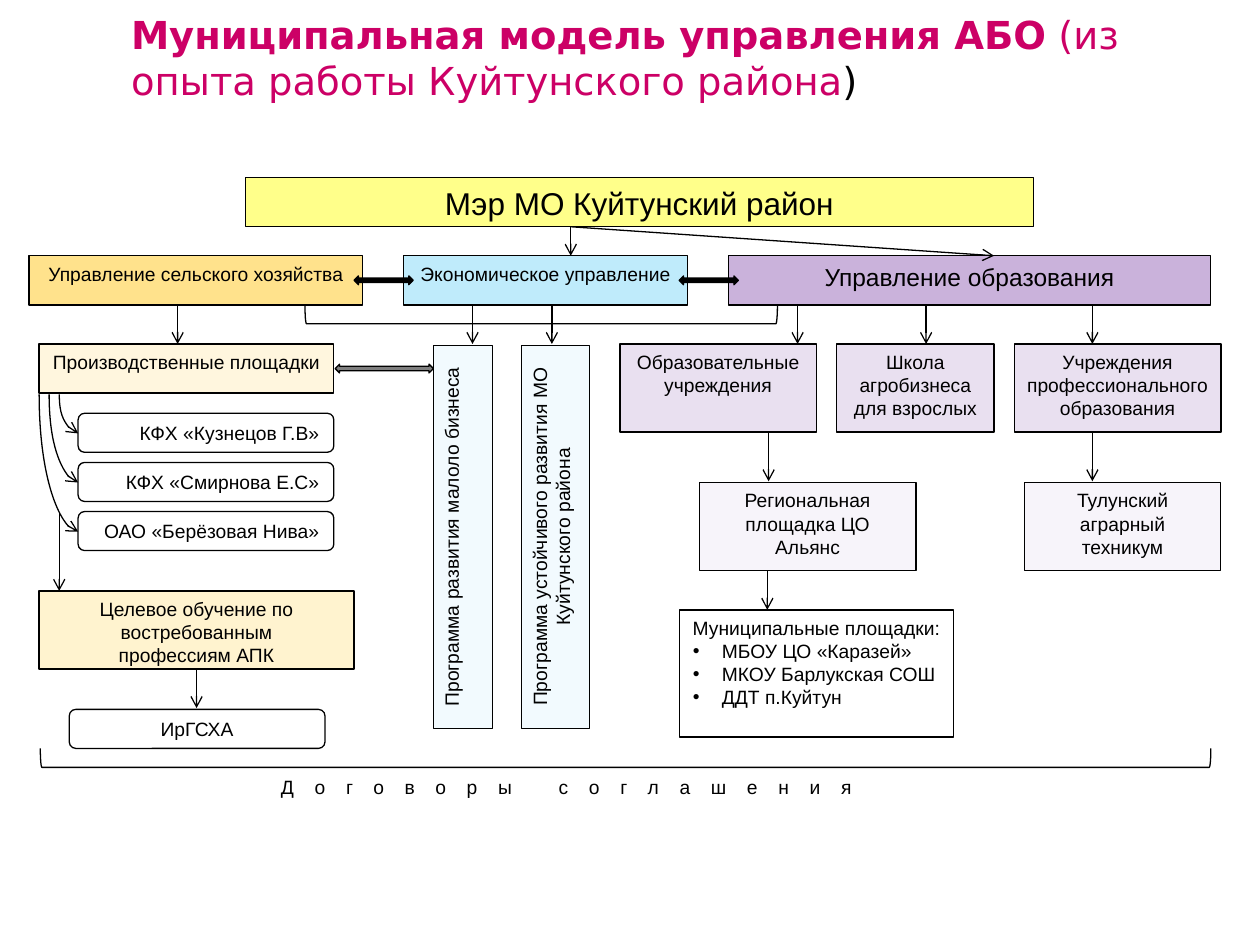
from dataclasses import dataclass

from lxml import etree
from pptx import Presentation
from pptx import util as u
from pptx.dml import color
from pptx.enum import shapes, text
from pptx.oxml import ns

INK, WHITE, PINK = "000000", "FFFFFF", "CC0066"
GOLD, BLUE, PURPLE = "FFC000", "00B0F0", "7030A0"
RECT = shapes.MSO_SHAPE.RECTANGLE
ROUNDED = shapes.MSO_SHAPE.FLOWCHART_ALTERNATE_PROCESS
CENTER, RIGHT, LEFT = text.PP_ALIGN.CENTER, text.PP_ALIGN.RIGHT, text.PP_ALIGN.LEFT


@dataclass
class Region:
    """A part of the page whose contents are placed from its top left corner."""
    page: object
    left: float
    top: float

    def spot(self, x, y):
        """Return page coordinates of a point in the region."""
        return u.Inches(self.left + x), u.Inches(self.top + y)


def rgb(value):
    """Turn a hex string into a colour."""
    return color.RGBColor.from_string(value)


def add_xml(parent, tag, **attributes):
    """Append a drawing element with attributes."""
    return etree.SubElement(parent, ns.qn(tag), **attributes)


def paint(shape, fill, alpha=100, line=INK):
    """Set fill, opacity and outline."""
    shape.shadow.inherit = False
    if fill:
        shape.fill.solid()
        shape.fill.fore_color.rgb = rgb(fill)
        if alpha < 100:
            tint = shape._element.spPr.find(".//" + ns.qn("a:srgbClr"))
            add_xml(tint, "a:alpha", val=str(alpha * 1000))
    else:
        shape.fill.background()
    if line:
        shape.line.color.rgb = rgb(line)
        shape.line.width = u.Pt(0.75)
    else:
        shape.line.fill.background()


def add_span(para, words, size, name="Arial", ink=INK, bold=False):
    """Add one formatted run."""
    span = para.add_run()
    span.text = words
    span.font.size, span.font.name, span.font.bold = u.Pt(size), name, bold
    span.font.color.rgb = rgb(ink)
    return span


def add_shape(region, kind, x, y, width, height, fill=None, alpha=100, line=INK, turn=0):
    """Add a shape that covers the given area after being turned."""
    if turn:
        x, y = x + (width - height) / 2, y + (height - width) / 2
        width, height = height, width
    shape = region.page.shapes.add_shape(
        kind, *region.spot(x, y), u.Inches(width), u.Inches(height))
    shape.rotation = turn
    paint(shape, fill, alpha, line)
    return shape


def add_box(region, x, y, width, height, lines, fill=WHITE, alpha=100, size=11,
            kind=RECT, align=CENTER, turn=0, line=INK):
    """Add a labelled box with one paragraph for each line."""
    box = add_shape(region, kind, x, y, width, height, fill, alpha, line, turn)
    frame = box.text_frame
    frame.word_wrap = True
    frame.vertical_anchor = text.MSO_ANCHOR.TOP
    for index, words in enumerate(lines):
        para = frame.add_paragraph() if index else frame.paragraphs[0]
        para.alignment = align
        add_span(para, words, size)
    return box


def add_arrow(region, x, y, end_x, end_y, curved=False):
    """Add an arrow; a curved one leaves downwards and arrives sideways."""
    kind = shapes.MSO_CONNECTOR.STRAIGHT
    start, end = (x, y), (end_x, end_y)
    if curved:
        kind = shapes.MSO_CONNECTOR.CURVE
        middle_x, middle_y = (x + end_x) / 2, (y + end_y) / 2
        half_x, half_y = (end_x - x) / 2, (end_y - y) / 2
        start = middle_x + half_y, middle_y - half_x
        end = middle_x - half_y, middle_y + half_x
    arrow = region.page.shapes.add_connector(kind, *region.spot(*start), *region.spot(*end))
    arrow.line.color.rgb = rgb(INK)
    arrow.line.width = u.Pt(0.75)
    properties = arrow._element.spPr
    if curved:
        properties.find(ns.qn("a:xfrm")).set("rot", "16200000")
        properties.find(ns.qn("a:prstGeom")).set("prst", "curvedConnector2")
    add_xml(properties.find(ns.qn("a:ln")), "a:tailEnd", type="arrow")
    add_xml(properties, "a:effectLst")


def add_double_arrow(region, x, y, width, alpha=100):
    """Add a thin block arrow with two heads."""
    add_shape(region, shapes.MSO_SHAPE.LEFT_RIGHT_ARROW, x, y, width, 0.07, INK, alpha)


def add_bracket(region, x, y, width):
    """Add a bracket that opens upwards."""
    bracket = add_shape(region, shapes.MSO_SHAPE.RIGHT_BRACKET, x, y, width, 0.15, turn=90)
    bracket.adjustments[0] = 0.083


def add_title(page):
    """Place and format the title."""
    title = page.shapes.title
    title.left, title.top = u.Inches(0.94), u.Inches(0.08)
    title.width, title.height = u.Inches(8.58), u.Inches(0.75)
    frame = title.text_frame
    frame.word_wrap, frame.auto_size = True, text.MSO_AUTO_SIZE.NONE
    frame.vertical_anchor = text.MSO_ANCHOR.MIDDLE
    para = frame.paragraphs[0]
    para.alignment = LEFT
    for words, ink, bold in (("Муниципальная модель управления АБО", PINK, True),
                             (" (из опыта работы Куйтунского района", PINK, False),
                             (")", INK, False)):
        add_span(para, words, 22, "DejaVu Sans", ink, bold)


def add_management(region):
    """Draw the mayor, the three departments and their links."""
    add_box(region, 1.72, 0, 6.25, 0.39, ["Мэр МО Куйтунский район"], "FFFF00", 46, 18)
    add_box(region, 0, 0.62, 2.65, 0.39, ["Управление сельского хозяйства"], GOLD, 45)
    add_box(region, 2.97, 0.62, 2.26, 0.39, ["Экономическое управление"], BLUE, 25)
    add_box(region, 5.55, 0.62, 3.83, 0.39, ["Управление образования"], PURPLE, 37, 14)
    for x in (2.58, 5.16):
        add_double_arrow(region, x, 0.78, 0.47)
    for end_x in (4.3, 7.66):
        add_arrow(region, 4.3, 0.39, end_x, 0.62)
    add_bracket(region, 2.19, 1.01, 3.75)


def add_agriculture(region):
    """Draw production sites, farms and vocational training."""
    add_arrow(region, 1.1, 0, 1.1, 0.31)
    add_box(region, 0, 0.31, 2.34, 0.39, ["Производственные площадки"], GOLD, 13)
    farms = ("КФХ «Кузнецов Г.В»", "КФХ «Смирнова Е.С»", "ОАО «Берёзовая Нива»")
    for index, farm in enumerate(farms):
        y = 0.86 + 0.39 * index
        add_box(region, 0.31, y, 2.03, 0.31, [farm], kind=ROUNDED, align=RIGHT)
        add_arrow(region, 0.16 - 0.08 * index, 0.71, 0.31, y + 0.16, curved=True)
    add_arrow(region, 0.16, 1.64, 0.16, 2.27)
    add_box(region, 0, 2.27, 2.5, 0.62,
            ["Целевое обучение по востребованным", "профессиям АПК"], GOLD, 19)
    add_arrow(region, 1.25, 2.89, 1.25, 3.2)
    add_box(region, 0.24, 3.21, 2.03, 0.31, ["ИрГСХА"], kind=ROUNDED)
    add_double_arrow(region, 2.35, 0.47, 0.78, 50)


def add_economy(region):
    """Draw the two upright development programmes."""
    programmes = ((0, 0.47, 0.31, "Программа развития малоло бизнеса"),
                  (0.7, 0.54, 0.94, "Программа устойчивого развития МО Куйтунского района"))
    for x, width, arrow_x, words in programmes:
        add_box(region, x, 0.32, width, 3.04, [words], BLUE, 5, turn=270)
        add_arrow(region, arrow_x, 0, arrow_x, 0.31)


def add_education(region):
    """Draw educational institutions and the sites below them."""
    schools = ((0, 1.56, 1.41, "Образовательные учреждения"),
               (1.72, 1.25, 2.43, "Школа агробизнеса для взрослых"),
               (3.13, 1.64, 3.75, "Учреждения профессионального образования"))
    for x, width, arrow_x, words in schools:
        add_box(region, x, 0.31, width, 0.7, [words], PURPLE, 15)
        add_arrow(region, arrow_x, 0, arrow_x, 0.31)
    partners = ((0.63, 1.72, 1.18, "Региональная площадка ЦО Альянс"),
                (3.21, 1.56, 3.75, "Тулунский аграрный техникум"))
    for x, width, arrow_x, words in partners:
        add_box(region, x, 1.41, width, 0.7, [words], PURPLE, 5)
        add_arrow(region, arrow_x, 1.02, arrow_x, 1.4)
    add_arrow(region, 1.17, 2.11, 1.17, 2.42)
    sites = add_box(region, 0.47, 2.42, 2.18, 1.01,
                    ["Муниципальные площадки:", "МБОУ ЦО «Каразей»",
                     "МКОУ Барлукская СОШ", "ДДТ п.Куйтун"])
    for para in sites.text_frame.paragraphs[1:]:
        para.alignment = LEFT
        layout = para._p.get_or_add_pPr()
        layout.set("marL", str(u.Inches(0.24)))
        layout.set("indent", str(u.Inches(-0.23)))
        add_xml(layout, "a:buFont", typeface="Arial")
        add_xml(layout, "a:buChar", char="•")


def add_agreements(region):
    """Draw the closing bracket and its spaced caption."""
    add_bracket(region, 0, 0, 9.29)
    caption = add_box(region, 0.23, 0.15, 7.89, 0.31, ["Договоры соглашения"],
                      fill=None, kind=ROUNDED, line=None)
    span = caption.text_frame.paragraphs[0].runs[0]
    span.font._element.set("spc", "1180")


def main():
    """Build and save the slide."""
    deck = Presentation()
    deck.slide_width, deck.slide_height = u.Inches(10), u.Inches(7.5)
    page = deck.slides.add_slide(deck.slide_layouts[5])
    add_title(page)
    add_management(Region(page, 0.23, 1.41))
    add_agriculture(Region(page, 0.31, 2.42))
    add_economy(Region(page, 3.44, 2.42))
    add_education(Region(page, 4.92, 2.42))
    add_agreements(Region(page, 0.32, 5.94))
    deck.save("out.pptx")


if __name__ == "__main__":
    main()
